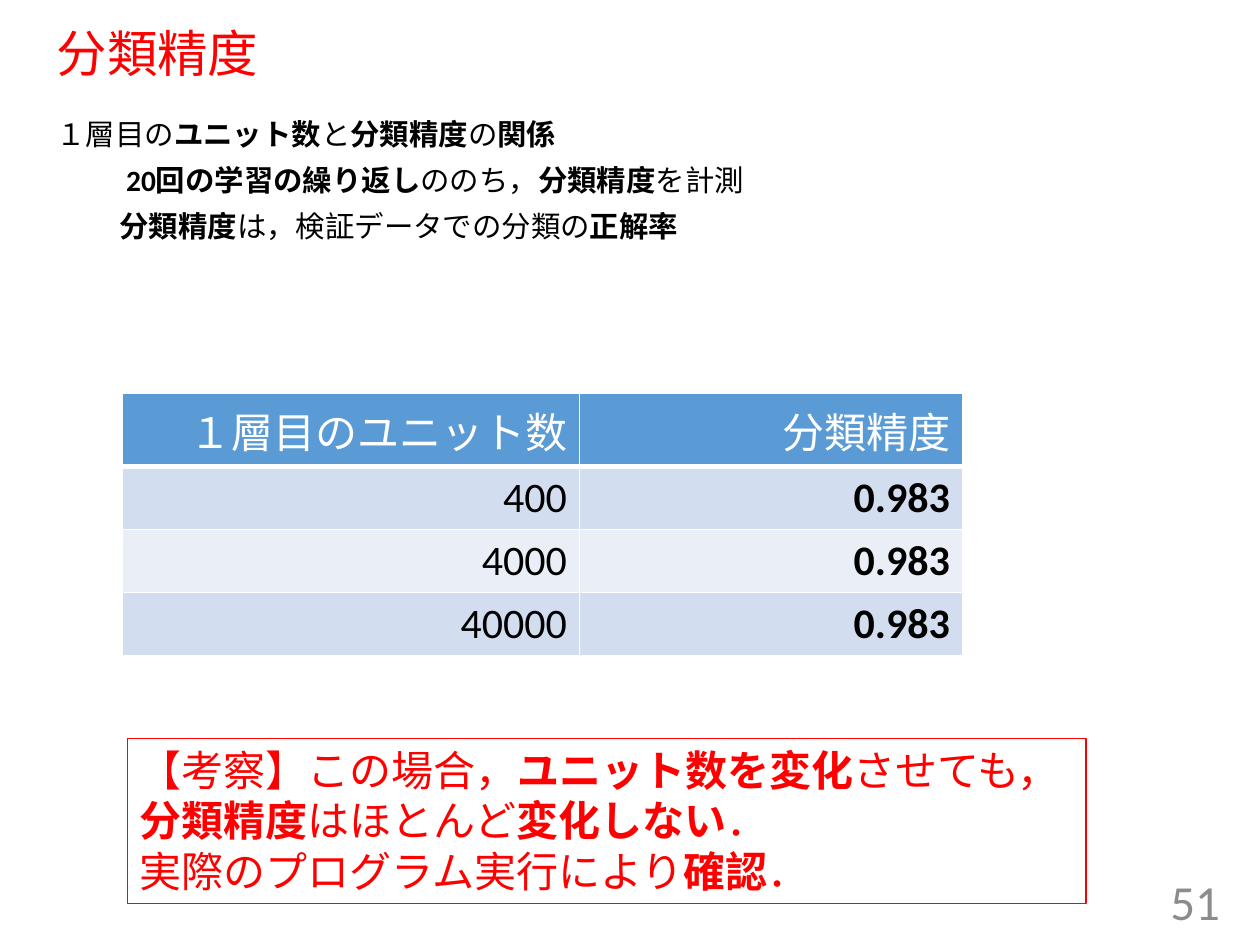
from lxml.etree import SubElement
from pptx import Presentation
from pptx.dml.color import RGBColor
from pptx.enum.shapes import MSO_SHAPE as Shape
from pptx.enum.text import MSO_ANCHOR as Anchor, MSO_AUTO_SIZE as AutoSize, PP_ALIGN as Align
from pptx.oxml.ns import qn
from pptx.util import Inches, Pt

FONT = "Calibri"
COLORS = {
    "red": "FF0000", "black": "000000", "white": "FFFFFF", "gray": "8C8C8C",
    "header": "5B9BD5", "band_dark": "D2DEEF", "band_light": "EAEFF7",
}

# Content: each paragraph is a list of (text, bold) runs
TITLE = [[("分類精度", False)]]
EXPLANATION = [
    [("１層目の", False), ("ユニット数", True), ("と", False),
     ("分類精度", True), ("の", False), ("関係", True)],
    [("\t", False), (" 20回の学習の繰り返し", True), ("ののち，", False),
     ("分類精度", True), ("を計測", False)],
    [("\t", False), ("分類精度", True), ("は，検証データでの分類の", False),
     ("正解率", True)],
]
ACCURACY = [
    ("１層目のユニット数", "分類精度"),
    ("400", "0.983"),
    ("4000", "0.983"),
    ("40000", "0.983"),
]
DISCUSSION = [
    [("【考察】この場合，", False), ("ユニット数を変化", True), ("させても，", False)],
    [("分類精度", True), ("はほとんど", False), ("変化しない", True), ("．", False)],
    [("実際のプログラム実行により", False), ("確認", True), ("．", False)],
]
PAGE_NUMBER = [[("51", False)]]
COLUMN_WIDTHS = (3.63, 3.04)
HEADER_HEIGHT, ROW_HEIGHT = 0.58, 0.5


def color(name):
    return RGBColor.from_string(COLORS[name])


def write(frame, paragraphs, size, ink, align=Align.LEFT, spacing=None, gap=0):
    for i, runs in enumerate(paragraphs):
        paragraph = frame.paragraphs[0] if i == 0 else frame.add_paragraph()
        paragraph.alignment = align
        if spacing:
            paragraph.line_spacing = spacing
        paragraph.space_before = Pt(gap if i else 0)
        for text, bold in runs:
            run = paragraph.add_run()
            run.text = text
            run.font.name = FONT
            run.font.size = Pt(size)
            run.font.bold = bold
            run.font.color.rgb = color(ink)


def set_borders(cell, is_header):
    properties = cell._tc.get_or_add_tcPr()
    for position, side in enumerate(("lnL", "lnR", "lnT", "lnB")):
        width = 3 if is_header and side == "lnB" else 1
        border = properties.makeelement(qn(f"a:{side}"), {"w": str(Pt(width))})
        fill = SubElement(border, qn("a:solidFill"))
        SubElement(fill, qn("a:srgbClr"), val=COLORS["white"])
        properties.insert(position, border)


prs = Presentation()
prs.slide_width, prs.slide_height = Inches(10), Inches(7.5)
slide = prs.slides.add_slide(prs.slide_layouts[5])

# Title
title = slide.shapes.title
title.left, title.top = Inches(0.35), Inches(0.19)
title.width, title.height = Inches(9.25), Inches(0.51)
title.text_frame.auto_size = AutoSize.NONE
title.text_frame.vertical_anchor = Anchor.MIDDLE
write(title.text_frame, TITLE, 28.8, "red", spacing=0.9)

# Explanation
explanation = slide.shapes.add_textbox(
    Inches(0.35), Inches(0.93), Inches(9.25), Inches(1.45)).text_frame
explanation.word_wrap = True
write(explanation, EXPLANATION, 16.8, "black", spacing=0.8, gap=10)

# Accuracy table
table = slide.shapes.add_table(
    len(ACCURACY), len(COLUMN_WIDTHS), Inches(0.97), Inches(3.12),
    Inches(sum(COLUMN_WIDTHS)),
    Inches(HEADER_HEIGHT + ROW_HEIGHT * (len(ACCURACY) - 1))).table
for column, width in zip(table.columns, COLUMN_WIDTHS):
    column.width = Inches(width)
for r, values in enumerate(ACCURACY):
    is_header = r == 0
    table.rows[r].height = Inches(HEADER_HEIGHT if is_header else ROW_HEIGHT)
    band = "header" if is_header else ("band_light", "band_dark")[r % 2]
    for c, value in enumerate(values):
        cell = table.cell(r, c)
        cell.fill.solid()
        cell.fill.fore_color.rgb = color(band)
        set_borders(cell, is_header)
        bold = not is_header and c == 1
        write(cell.text_frame, [[(value, bold)]], 24,
              "white" if is_header else "black", Align.RIGHT)

# Discussion box
discussion = slide.shapes.add_shape(
    Shape.RECTANGLE, Inches(1.01), Inches(5.86), Inches(7.61), Inches(1.31))
discussion.shadow.inherit = False
discussion.fill.background()
discussion.line.color.rgb = color("red")
discussion.line.width = Pt(0.75)
discussion.text_frame.word_wrap = False
discussion.text_frame.auto_size = AutoSize.SHAPE_TO_FIT_TEXT
discussion.text_frame.vertical_anchor = Anchor.TOP
write(discussion.text_frame, DISCUSSION, 24, "red")

# Page number
page_number = slide.shapes.add_textbox(
    Inches(7.53), Inches(6.95), Inches(2.25), Inches(0.4)).text_frame
page_number.word_wrap = True
page_number.vertical_anchor = Anchor.MIDDLE
write(page_number, PAGE_NUMBER, 28, "gray", Align.RIGHT)

prs.save("out.pptx")
